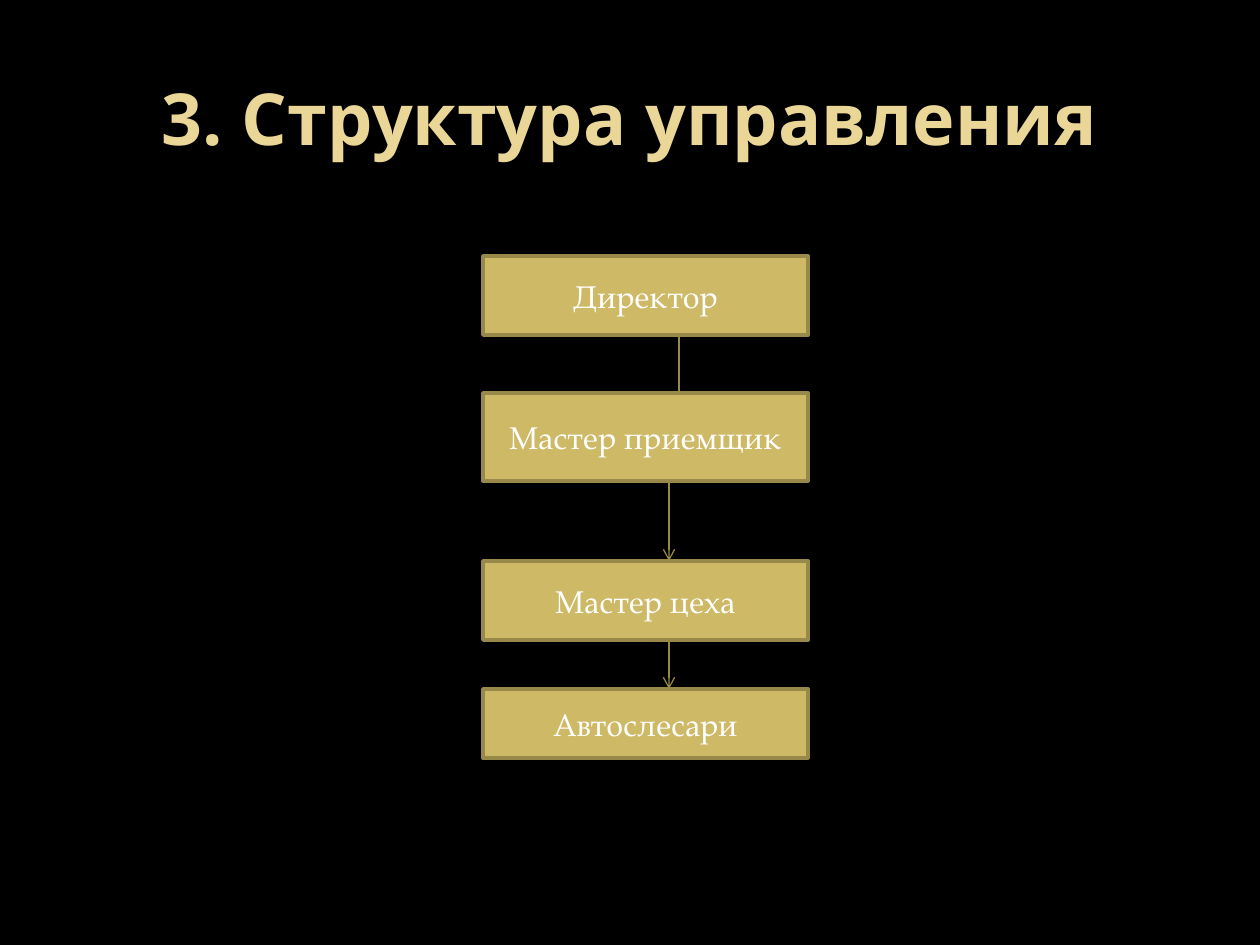
from lxml.etree import SubElement
from pptx import Presentation
from pptx.dml.color import RGBColor
from pptx.enum.shapes import MSO_CONNECTOR, MSO_SHAPE
from pptx.enum.text import MSO_ANCHOR, PP_ALIGN
from pptx.oxml.ns import qn
from pptx.util import Emu, Pt

TITLE = "3. Структура управления"
# label, top, height
ROLES = [
    ("Директор", 256, 79),
    ("Мастер приемщик", 393, 88),
    ("Мастер цеха", 561, 79),
    ("Автослесари", 689, 69),
]
# x, end y of the arrow leaving each role but the last
ARROWS = [(679, 403), (669, 561), (669, 689)]
BOX_LEFT, BOX_WIDTH = 483, 325


def px(length):
    return Emu(round(length * 914400 / 126))


def color(value):
    return RGBColor.from_string(value)


def write(shape, text, font, size, ink, bold=False):
    frame = shape.text_frame
    frame.word_wrap = True
    frame.vertical_anchor = MSO_ANCHOR.MIDDLE
    frame.text = text
    para = frame.paragraphs[0]
    para.alignment = PP_ALIGN.CENTER
    style = para.runs[0].font
    style.name, style.size, style.bold = font, Pt(size), bold
    style.color.rgb = color(ink)


def add_role(slide, label, top, height):
    box = slide.shapes.add_shape(
        MSO_SHAPE.RECTANGLE, px(BOX_LEFT), px(top), px(BOX_WIDTH), px(height))
    box.shadow.inherit = False
    box.fill.solid()
    box.fill.fore_color.rgb = color("CEB966")
    box.line.color.rgb = color("98894B")
    box.line.width = Pt(2)
    write(box, label, "TeX Gyre Pagella", 18, "FFFFFF")


def add_arrow(slide, x, start, end):
    arrow = slide.shapes.add_connector(
        MSO_CONNECTOR.STRAIGHT, px(x), px(start), px(x), px(end))
    arrow.line.color.rgb = color("998946")
    arrow.line.width = Pt(0.75)
    SubElement(arrow.line._get_or_add_ln(), qn("a:tailEnd"), type="arrow")
    SubElement(arrow._element.spPr, qn("a:effectLst"))


deck = Presentation()
deck.slide_width, deck.slide_height = px(1260), px(945)
page = deck.slides.add_slide(deck.slide_layouts[6])
page.background.fill.solid()
page.background.fill.fore_color.rgb = color("000000")

# Title
title = page.shapes.add_textbox(px(63), px(38), px(1134), px(158))
write(title, TITLE, "Noto Sans", 41, "EAD696", bold=True)

# Chain of command: each arrow lies under the box it leads to
for index, (label, top, height) in enumerate(ROLES):
    add_role(page, label, top, height)
    if index < len(ARROWS):
        x, end = ARROWS[index]
        add_arrow(page, x, top + height, end)

deck.save("out.pptx")
